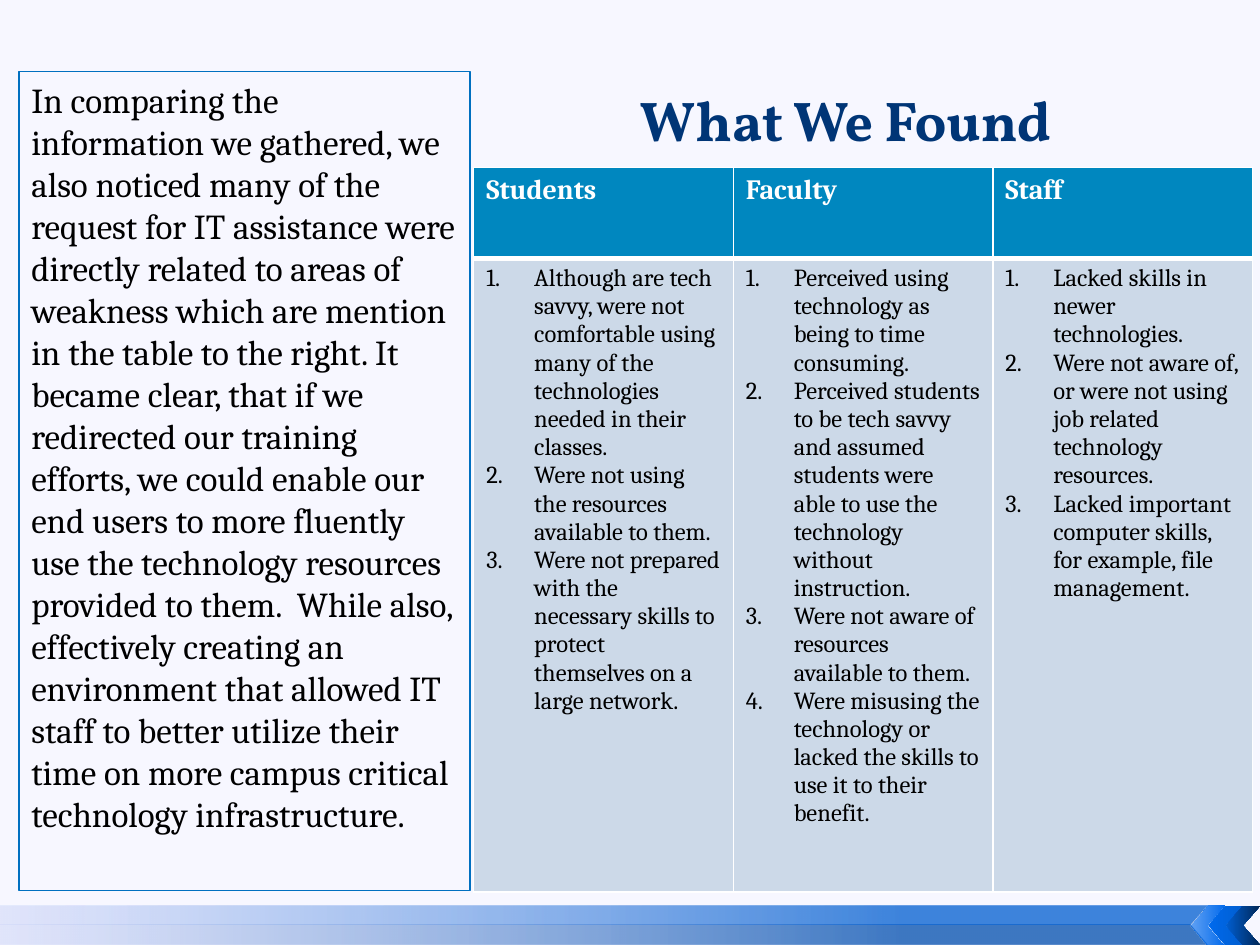
from dataclasses import dataclass

from lxml.etree import SubElement
from pptx import Presentation
from pptx.dml.color import RGBColor
from pptx.enum.shapes import MSO_SHAPE
from pptx.enum.text import MSO_ANCHOR, PP_ALIGN
from pptx.oxml import parse_xml
from pptx.oxml.ns import nsdecls, qn
from pptx.util import Inches, Pt


@dataclass(frozen=True)
class Theme:
    background: str = "F7F7FF"
    title: str = "003576"
    text: str = "000000"
    white: str = "FFFFFF"
    header: str = "0087BF"
    body: str = "CCD9E8"
    frame: str = "0070C0"
    title_font: str = "Vollkorn"
    text_font: str = "Cambria"
    title_size: int = 32
    summary_size: int = 20
    header_size: int = 16
    finding_size: int = 14


@dataclass(frozen=True)
class Stop:
    position: int
    color: str
    opacity: int = 100


@dataclass(frozen=True)
class Band:
    outer_y: float
    stops: tuple[Stop, ...]


@dataclass(frozen=True)
class Group:
    name: str
    findings: tuple[str, ...]


THEME = Theme()
FOOTER_TOP, FOOTER_MIDDLE, FOOTER_BOTTOM = 7.19, 7.34, 7.5
BANDS = (
    Band(FOOTER_BOTTOM, (Stop(25, "004EAF", 75), Stop(100, "CCD4F8", 50))),
    Band(FOOTER_TOP, (Stop(25, "005ED1", 75), Stop(100, "CCD4F8", 50))),
)
CHEVRONS = (
    (Stop(0, "006AED", 60), Stop(100, "006AED")),
    (Stop(0, "006AED"), Stop(100, "005ED1")),
    (Stop(0, "005ED1"), Stop(100, "002757")),
)
SUMMARY = (
    "In comparing the information we gathered, we also noticed many of the request "
    "for IT assistance were directly related to areas of weakness which are mention "
    "in the table to the right. It became clear, that if we redirected our training "
    "efforts, we could enable our end users to more fluently use the technology "
    "resources provided to them.  While also, effectively creating an environment "
    "that allowed IT staff to better utilize their time on more campus critical "
    "technology infrastructure."
)
GROUPS = (
    Group("Students", (
        "Although are tech savvy, were not comfortable using many of the "
        "technologies needed in their classes.",
        "Were not using the resources available to them.",
        "Were not prepared with the necessary skills to protect themselves on a "
        "large network.",
    )),
    Group("Faculty", (
        "Perceived using technology as being to time consuming.",
        "Perceived students to be tech savvy and assumed students were able to use "
        "the technology without instruction.",
        "Were not aware of resources available to them.",
        "Were misusing the technology or lacked the skills to use it to their benefit.",
    )),
    Group("Staff", (
        "Lacked skills in newer technologies.",
        "Were not aware of, or were not using job related technology resources.",
        "Lacked important computer skills, for example, file management.",
    )),
)


def rgb(color: str) -> RGBColor:
    return RGBColor.from_string(color)


def add_run(paragraph, text: str, size: int, color: str,
            font: str = THEME.text_font, bold: bool = False) -> None:
    run = paragraph.add_run()
    run.text = text
    run.font.size, run.font.name, run.font.bold = Pt(size), font, bold
    run.font.color.rgb = rgb(color)


def fade_leftward(shape, stops: tuple[Stop, ...]) -> None:
    """Fill with a gradient running from right to left, without outline."""
    shape.shadow.inherit = False
    shape.line.fill.background()
    marks = "".join(
        f'<a:gs pos="{s.position * 1000}"><a:srgbClr val="{s.color}">'
        f'<a:alpha val="{s.opacity * 1000}"/></a:srgbClr></a:gs>' for s in stops)
    gradient = parse_xml(
        f'<a:gradFill {nsdecls("a")} rotWithShape="1"><a:gsLst>{marks}</a:gsLst>'
        '<a:lin ang="10800000" scaled="0"/></a:gradFill>')
    properties = shape._element.spPr
    properties.find(qn("a:ln")).addprevious(gradient)


def add_footer(slide) -> None:
    for band in BANDS:
        builder = slide.shapes.build_freeform(
            Inches(9.58), Inches(band.outer_y))
        builder.add_line_segments([
            (Inches(x), Inches(y)) for x, y in
            ((0, band.outer_y), (0, FOOTER_MIDDLE), (9.44, FOOTER_MIDDLE))])
        fade_leftward(builder.convert_to_shape(), band.stops)
    for index, stops in enumerate(CHEVRONS):
        chevron = slide.shapes.add_shape(
            MSO_SHAPE.CHEVRON, Inches(9.45 + 0.14 * index), Inches(FOOTER_TOP),
            Inches(0.27), Inches(FOOTER_BOTTOM - FOOTER_TOP))
        chevron.adjustments[0] = 0.5
        chevron._element.spPr.find(qn("a:xfrm")).set("flipH", "1")
        fade_leftward(chevron, stops)


def add_title(slide) -> None:
    title = slide.shapes.add_textbox(
        Inches(3.92), Inches(0.31), Inches(5.58), Inches(1.27)).text_frame
    title.word_wrap = True
    title.vertical_anchor = MSO_ANCHOR.MIDDLE
    heading = title.paragraphs[0]
    heading.alignment = PP_ALIGN.CENTER
    add_run(heading, "What We Found", THEME.title_size, THEME.title,
            THEME.title_font, bold=True)


def add_summary(slide) -> None:
    panel = slide.shapes.add_shape(
        MSO_SHAPE.RECTANGLE, Inches(0.15), Inches(0.57), Inches(3.58), Inches(6.5))
    panel.shadow.inherit = False
    panel.fill.background()
    panel.line.color.rgb = rgb(THEME.frame)
    panel.line.width = Pt(0.75)
    panel.text_frame.word_wrap = True
    panel.text_frame.vertical_anchor = MSO_ANCHOR.TOP
    paragraph = panel.text_frame.paragraphs[0]
    paragraph.alignment = PP_ALIGN.LEFT
    add_run(paragraph, SUMMARY, THEME.summary_size, THEME.text)


def style_cell(cell, fill: str, bottom_width: float) -> None:
    cell.fill.solid()
    cell.fill.fore_color.rgb = rgb(fill)
    properties = cell._tc.get_or_add_tcPr()
    widths = {"lnL": 1, "lnR": 1, "lnT": 1, "lnB": bottom_width}
    for place, (side, width) in enumerate(widths.items()):
        properties.insert(place, parse_xml(
            f'<a:{side} {nsdecls("a")} w="{Pt(width)}"><a:solidFill>'
            f'<a:srgbClr val="{THEME.white}"/></a:solidFill></a:{side}>'))


def add_findings(slide) -> None:
    column_width, row_heights = 2.06, (0.72, 5.03)
    table = slide.shapes.add_table(
        len(row_heights), len(GROUPS), Inches(3.76), Inches(1.33),
        Inches(column_width * len(GROUPS)), Inches(sum(row_heights))).table
    for row, height in zip(table.rows, row_heights):
        row.height = Inches(height)
    for index, group in enumerate(GROUPS):
        table.columns[index].width = Inches(column_width)
        header, body = table.cell(0, index), table.cell(1, index)
        style_cell(header, THEME.header, bottom_width=3)
        style_cell(body, THEME.body, bottom_width=1)
        add_run(header.text_frame.paragraphs[0], group.name,
                THEME.header_size, THEME.white, bold=True)
        for number, finding in enumerate(group.findings):
            frame = body.text_frame
            paragraph = frame.add_paragraph() if number else frame.paragraphs[0]
            properties = paragraph._p.get_or_add_pPr()
            properties.set("marL", str(Inches(0.38)))
            properties.set("indent", str(Inches(-0.38)))
            SubElement(properties, qn("a:buFont")).set("typeface", "+mj-lt")
            SubElement(properties, qn("a:buAutoNum")).set("type", "arabicPeriod")
            add_run(paragraph, finding, THEME.finding_size, THEME.text)


def main() -> None:
    deck = Presentation()
    deck.slide_width, deck.slide_height = Inches(10), Inches(7.5)
    slide = deck.slides.add_slide(deck.slide_layouts[6])
    slide.background.fill.solid()
    slide.background.fill.fore_color.rgb = rgb(THEME.background)
    add_footer(slide)
    add_title(slide)
    add_findings(slide)
    add_summary(slide)
    deck.save("out.pptx")


if __name__ == "__main__":
    main()
